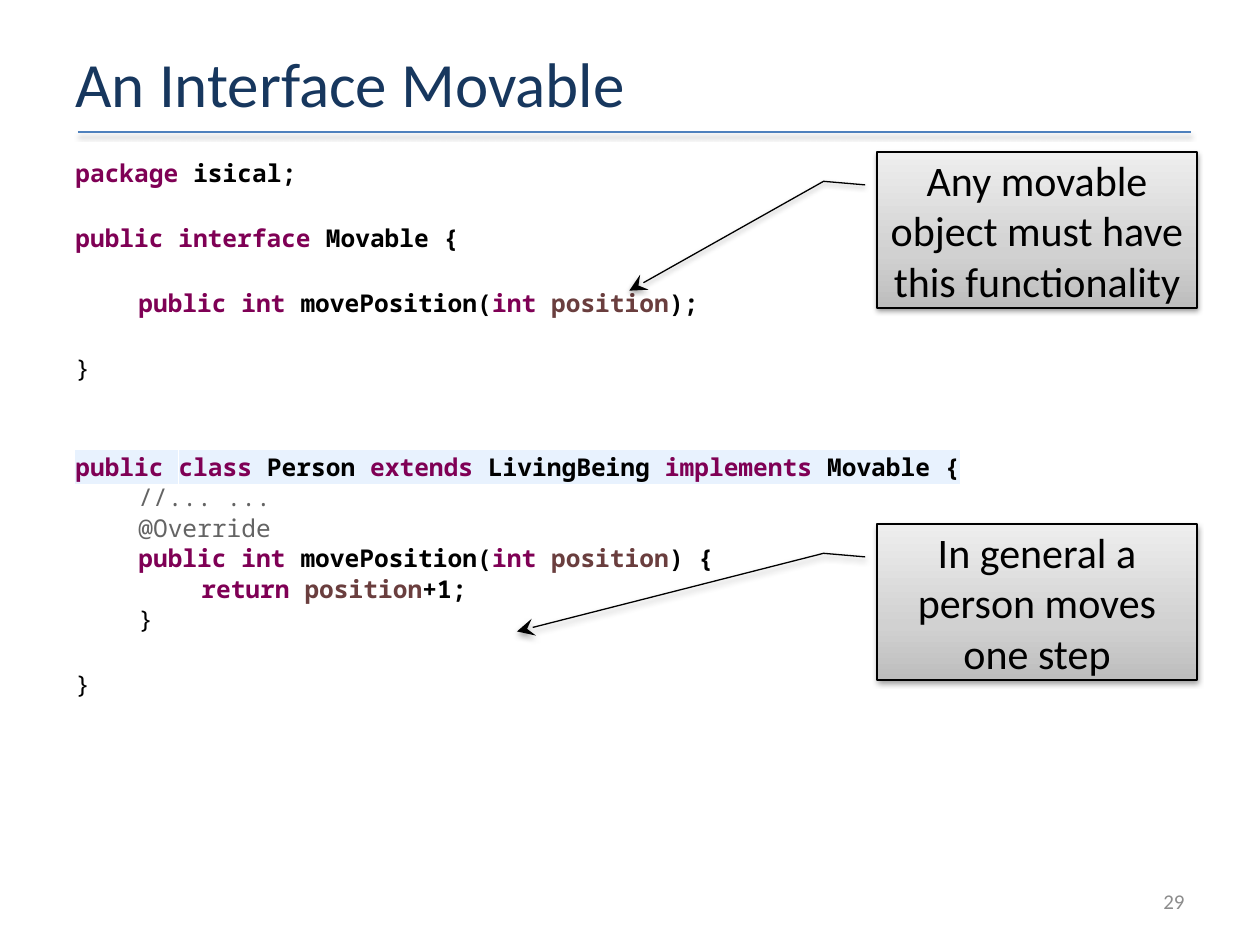
from dataclasses import dataclass
from copy import deepcopy
from typing import Optional

from lxml.etree import SubElement
from pptx import Presentation
from pptx.dml.color import RGBColor
from pptx.enum.shapes import MSO_CONNECTOR as Connector, MSO_SHAPE as Shape
from pptx.enum.text import MSO_ANCHOR as Anchor, PP_ALIGN as Align
from pptx.oxml.ns import qn
from pptx.util import Emu, Pt

PX_PER_INCH = 126


def px(length: int) -> Emu:
    return Emu(round(length * 914400 / PX_PER_INCH))


@dataclass(frozen=True)
class Theme:
    body_font: str = "Calibri"
    code_font: str = "Noto Sans Mono"
    title_size: int = 36
    callout_size: int = 24
    code_size: int = 14
    number_size: int = 12
    code_gap: float = 0.6
    code_pitch: float = 19.65
    title: str = "17375E"
    rule: str = "4F81BD"
    number: str = "8C8C8C"
    black: str = "000000"
    keyword: str = "7F0055"
    variable: str = "6A3E3E"
    comment: str = "646464"
    highlight: str = "E8F2FE"
    gradient: tuple = ((0, "BDBDBD"), (0.35, "D1D1D1"), (1, "EEEEEE"))


THEME = Theme()


@dataclass(frozen=True)
class Box:
    left: int
    top: int
    width: int
    height: int


@dataclass(frozen=True)
class Token:
    text: str
    color: str = THEME.black
    bold: bool = True


@dataclass(frozen=True)
class CodeLine:
    tokens: tuple[Token, ...]
    level: int = 0
    blank_lines: int = 0
    highlight: Optional[str] = None


@dataclass(frozen=True)
class Callout:
    text: str
    top: int
    tip: tuple[float, float]  # down and across, as shares of the box


def keyword(text: str) -> Token:
    return Token(text, THEME.keyword)


def variable(text: str) -> Token:
    return Token(text, THEME.variable)


def signature(ending: str) -> tuple[Token, ...]:
    return (keyword("public int "), Token("movePosition("), keyword("int "),
            variable("position"), Token(ending))


def comment(text: str) -> tuple[Token, ...]:
    return (Token(text, THEME.comment, False),)


CLOSING = (Token("}", bold=False),)
CODE = (
    CodeLine((keyword("package "), Token("isical;"))),
    CodeLine((keyword("public interface"), Token(" Movable {")), blank_lines=1),
    CodeLine(signature(");"), level=1, blank_lines=1),
    CodeLine(CLOSING, blank_lines=1),
    CodeLine((keyword("public"), Token(" "), keyword("class"), Token(" Person "),
              keyword("extends"), Token(" LivingBeing "), keyword("implements"),
              Token(" Movable {")), blank_lines=2, highlight=THEME.highlight),
    CodeLine(comment("//... ..."), level=1),
    CodeLine(comment("@Override"), level=1),
    CodeLine(signature(") {"), level=1),
    CodeLine((keyword("return "), variable("position"), Token("+1;")), level=2),
    CodeLine(CLOSING, level=1),
    CodeLine(CLOSING, blank_lines=1),
)
CALLOUTS = (
    Callout("Any movable object must have this functionality", 152, (0.889, -0.774)),
    Callout("In general a person moves one step", 524, (0.689, -1.125)),
)


def add_run(paragraph, text: str, size: int, color: str, font: str, bold: bool = False):
    run = paragraph.add_run()
    run.text = text
    run.font.size = Pt(size)
    run.font.bold = bold
    run.font.color.rgb = RGBColor.from_string(color)
    run.font.name = font
    return run


def highlight_run(run, color: str) -> None:
    properties = run.font._element
    mark = SubElement(properties, qn("a:highlight"))
    SubElement(mark, qn("a:srgbClr"), val=color)
    properties.find(qn("a:solidFill")).addnext(mark)


def add_text_frame(slide, box: Box, anchor: Anchor = Anchor.MIDDLE):
    shape = slide.shapes.add_textbox(px(box.left), px(box.top), px(box.width), px(box.height))
    frame = shape.text_frame
    frame.word_wrap = True
    frame.vertical_anchor = anchor
    return frame


def add_shadow(shape) -> None:
    """Give the shape a soft shadow falling straight down; call after fill and line."""
    effects = SubElement(shape._element.spPr, qn("a:effectLst"))
    shadow = SubElement(effects, qn("a:outerShdw"), blurRad="40000", dist="20000",
                        dir="5400000", rotWithShape="0")
    color = SubElement(shadow, qn("a:srgbClr"), val=THEME.black)
    SubElement(color, qn("a:alpha"), val="38000")


def add_title(slide) -> None:
    paragraph = add_text_frame(slide, Box(63, 38, 1134, 89)).paragraphs[0]
    add_run(paragraph, "An Interface Movable", THEME.title_size, THEME.title, THEME.body_font)
    rule = slide.shapes.add_connector(Connector.STRAIGHT, px(78), px(132), px(1191), px(132))
    rule.line.color.rgb = RGBColor.from_string(THEME.rule)
    rule.line.width = Pt(1)
    add_shadow(rule)


def add_code(slide, lines: tuple[CodeLine, ...]) -> None:
    frame = add_text_frame(slide, Box(63, 152, 1134, 692), Anchor.TOP)
    for index, line in enumerate(lines):
        paragraph = frame.add_paragraph() if index else frame.paragraphs[0]
        paragraph.space_before = Pt(THEME.code_gap + line.blank_lines * THEME.code_pitch)
        paragraph._p.get_or_add_pPr().set("marL", str(px(63 * line.level)))
        for token in line.tokens:
            run = add_run(paragraph, token.text, THEME.code_size, token.color,
                          THEME.code_font, token.bold)
            if line.highlight:
                highlight_run(run, line.highlight)


def fill_gradient(shape) -> None:
    shape.fill.gradient()
    shape.fill.gradient_angle = 90
    stop_list = shape._element.spPr.find(qn("a:gradFill")).find(qn("a:gsLst"))
    stop_list.append(deepcopy(stop_list[-1]))
    for stop, (position, color) in zip(shape.fill.gradient_stops, THEME.gradient):
        stop.position = position
        stop.color.rgb = RGBColor.from_string(color)


def add_callout(slide, callout: Callout) -> None:
    shape = slide.shapes.add_shape(Shape.LINE_CALLOUT_2, px(877), px(callout.top),
                                   px(320), px(156))
    for index, value in enumerate((0.211, -0.037, 0.188, -0.167, *callout.tip)):
        shape.adjustments[index] = value
    fill_gradient(shape)
    shape.line.color.rgb = RGBColor.from_string(THEME.black)
    shape.line.width = Pt(0.75)
    SubElement(shape.line._get_or_add_ln(), qn("a:tailEnd"), type="stealth", w="lg", len="lg")
    add_shadow(shape)
    frame = shape.text_frame
    frame.word_wrap = True
    frame.vertical_anchor = Anchor.MIDDLE
    paragraph = frame.paragraphs[0]
    paragraph.alignment = Align.CENTER
    add_run(paragraph, callout.text, THEME.callout_size, THEME.black, THEME.body_font)


def add_slide_number(slide) -> None:
    paragraph = add_text_frame(slide, Box(903, 876, 294, 50)).paragraphs[0]
    paragraph.alignment = Align.RIGHT
    add_run(paragraph, "29", THEME.number_size, THEME.number, THEME.body_font)


def main() -> None:
    presentation = Presentation()
    presentation.slide_width, presentation.slide_height = px(1260), px(945)
    slide = presentation.slides.add_slide(presentation.slide_layouts[6])
    add_title(slide)
    add_code(slide, CODE)
    add_slide_number(slide)
    for callout in CALLOUTS:
        add_callout(slide, callout)
    presentation.save("out.pptx")


if __name__ == "__main__":
    main()
